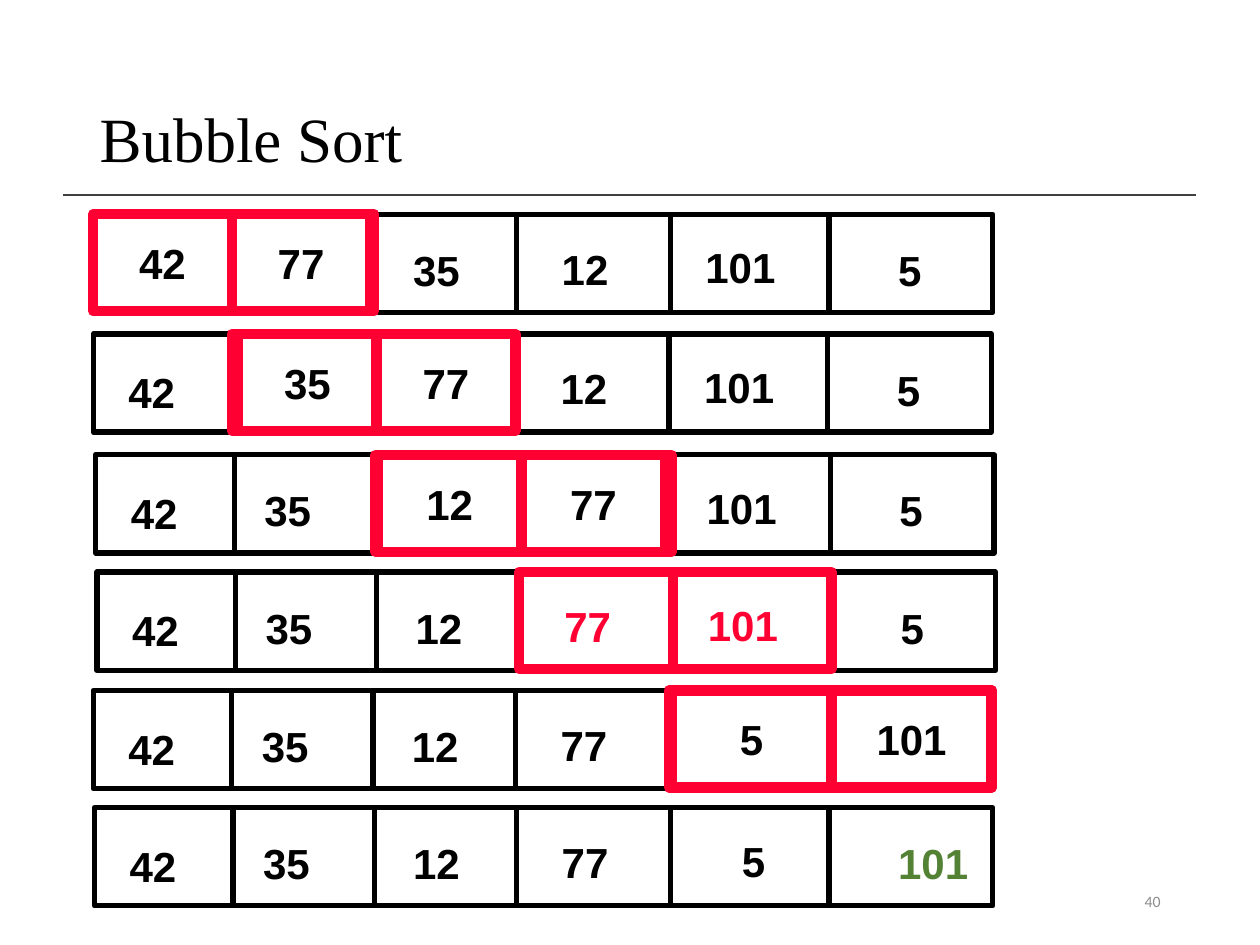
import pptx
import pptx.util
import pptx.dml.color
import pptx.enum.shapes
import pptx.enum.text
import pptx.oxml.ns
import lxml.etree

Inches, Pt = pptx.util.Inches, pptx.util.Pt
RGB = pptx.dml.color.RGBColor.from_string
ALIGN = pptx.enum.text.PP_ALIGN
MIDDLE = pptx.enum.text.MSO_ANCHOR.MIDDLE

THEME = {
    "ink": "000000", "active": "FF0033", "sorted": "548235", "paper": "FFFFFF",
    "rule": "404040", "muted": "8C8C8C",
    "title": ("Times New Roman", 36), "value": ("Arial", 24), "number": ("Calibri", 9),
}

# Column edges and label positions, measured from the left of a row
EDGES = [0, 1.1, 2.22, 3.35, 4.57, 5.83, 7.13]
LABEL_X = [0.18, 1.24, 2.43, 3.61, 4.75, 6.28]
LABEL_Y = [0.21, 0.19, 0.19, 0.18, 0.17, 0.19]
ROW_H, BOX_H = 0.78, 0.77

# left, top, values, first column of the compared pair, swapped pair (left, cell width)
ROWS = [
    (0.75, 1.70, [42, 77, 35, 12, 101, 5], 0, (0.74, 1.1)),
    (0.74, 2.65, [42, 35, 77, 12, 101, 5], 1, (1.89, 1.1)),
    (0.76, 3.61, [42, 35, 12, 77, 101, 5], 2, (3.0, 1.14)),
    (0.77, 4.54, [42, 35, 12, 77, 101, 5], 3, None),
    (0.74, 5.48, [42, 35, 12, 77, 5, 101], 4, (5.33, 1.27)),
    (0.75, 6.41, [42, 35, 12, 77, 5, 101], None, None),
]

prs = pptx.Presentation()
prs.slide_width, prs.slide_height = Inches(10), Inches(7.5)
s = prs.slides.add_slide(prs.slide_layouts[5])


def put(x, y, w, h, text="", style="value", color="ink", outline=None, fill=None):
    """Add a text box, or a rectangle when an outline (colour, points) is given."""
    at = [Inches(v) for v in (x, y, w, h)]
    if outline:
        sp = s.shapes.add_shape(pptx.enum.shapes.MSO_SHAPE.RECTANGLE, *at)
        sp.shadow.inherit = False
        sp.line.color.rgb, sp.line.width = RGB(THEME[outline[0]]), Pt(outline[1])
        if fill:
            sp.fill.solid()
            sp.fill.fore_color.rgb = RGB(THEME[fill])
        else:
            sp.fill.background()
    else:
        sp = s.shapes.add_textbox(*at)
    if text:
        tf = sp.text_frame
        tf.text, tf.word_wrap = text, False
        font = tf.paragraphs[0].runs[0].font
        font.name, size = THEME[style]
        font.size, font.bold = Pt(size), style == "value"
        font.color.rgb = RGB(THEME[color])
    return sp


def rule(x1, y1, x2, y2, color, width):
    sp = s.shapes.add_connector(pptx.enum.shapes.MSO_CONNECTOR.STRAIGHT,
                                Inches(x1), Inches(y1), Inches(x2), Inches(y2))
    sp.line.color.rgb, sp.line.width = RGB(THEME[color]), Pt(width)
    lxml.etree.SubElement(sp._element.spPr, pptx.oxml.ns.qn("a:effectLst"))


rule(0.5, 1.55, 9.49, 1.55, "rule", 1)

title = s.shapes.title
title.left, title.top, title.width, title.height = map(Inches, (0.69, 0.4, 8.62, 1.45))
tf = title.text_frame
tf.text, tf.vertical_anchor = "Bubble Sort", MIDDLE
p = tf.paragraphs[0]
p.alignment, p.line_spacing = ALIGN.LEFT, 0.9
font = p.runs[0].font
font.name, size = THEME["title"]
font.size, font.color.rgb = Pt(size), RGB(THEME["ink"])

for left, top, values, first, swapped in ROWS:
    pair = [] if first is None else [first, first + 1]
    put(left, top, EDGES[-1], ROW_H, outline=("ink", 3))
    for edge in EDGES[1:-1]:
        rule(left + edge, top, left + edge, top + ROW_H, "ink", 3)

    for col, value in enumerate(values):
        if col in pair and swapped:
            continue
        color = "active" if col in pair else "ink"
        if first is None and col == 5:
            color = "sorted"
        x = LABEL_X[col] + (0.29 if (col, value) == (4, 5) else 0)
        put(left + x, top + LABEL_Y[col], 0.2 + 0.19 * len(str(value)), 0.5,
            str(value), color=color)

    for col in pair:
        put(left + EDGES[col], top, EDGES[col + 1] - EDGES[col], BOX_H, outline=("active", 6))
    if swapped:
        x, width = swapped
        for i, col in enumerate(pair):
            sp = put(x + i * width, top, width, BOX_H, str(values[col]),
                     outline=("active", 6), fill="paper")
            sp.text_frame.vertical_anchor = MIDDLE
            sp.text_frame.paragraphs[0].alignment = ALIGN.CENTER

sp = put(7.06, 6.95, 2.25, 0.4, "40", "number", "muted")
sp.text_frame.word_wrap = True
sp.text_frame.vertical_anchor = MIDDLE
sp.text_frame.paragraphs[0].alignment = ALIGN.RIGHT

prs.save("out.pptx")
